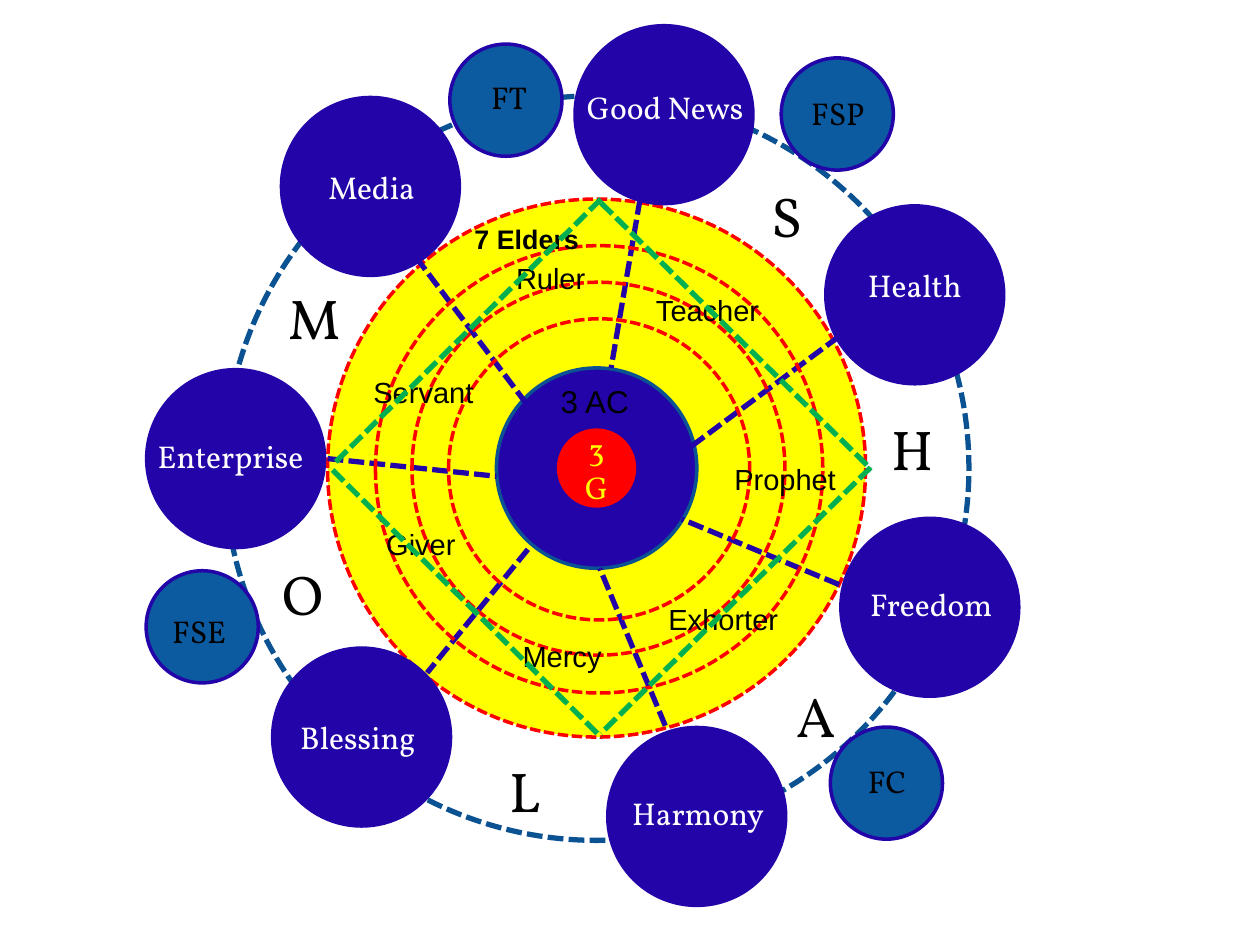
"""Build a wheel diagram of seven domains around a shared core."""
import pptx
import pptx.dml.color
import pptx.enum.dml
import pptx.enum.shapes
import pptx.enum.text
import pptx.oxml
import pptx.util

PX = 9144
SERIF, SANS = "Vollkorn", "Arial"
WHITE, BLACK, YELLOW, RED = "FFFFFF", "000000", "FFFF00", "FF0000"
INDIGO, NAVY, BLUE, GREEN = "2304A8", "0B5292", "0C5AA0", "00B050"

HUB, RING_CENTRE = (473, 371), (475, 372)
DISCS = [
    (591, WHITE, NAVY, 3, True),
    (427, YELLOW, RED, 2, True),
    (159, INDIGO, NAVY, 2, False),
]
CORE_SIZE, DOMAIN_SIZE, SATELLITE_SIZE = 63, 144, 89
RING_SIZES = [239, 296, 355]

# name, circle left and top, label left and top
DOMAINS = [
    ("Good News", (455, 19), (461, 70)),
    ("Health", (654, 162), (659, 211)),
    ("Freedom", (666, 410), (672, 464)),
    ("Harmony", (481, 576), (487, 630)),
    ("Blessing", (215, 513), (217, 570)),
    ("Enterprise", (115, 292), (116, 347)),
    ("Media", (222, 76), (228, 133)),
]
SATELLITES = [
    ("FSP", (620, 46), (641, 75)),
    ("FSE", (116, 453), (134, 486)),
    ("FC", (659, 577), (680, 605)),
    ("FT", (357, 35), (380, 62)),
]
SPOKES = [
    ((508, 158), (485, 292)),
    ((666, 267), (549, 354)),
    ((330, 204), (419, 322)),
    ((260, 364), (394, 378)),
    ((666, 464), (541, 412)),
    ((528, 576), (476, 451)),
    ((419, 436), (339, 534)),
]
LETTERS = [("S", 581, 144), ("H", 681, 329), ("A", 604, 541),
           ("L", 373, 600), ("O", 197, 444), ("M", 206, 225)]
GIFTS = [("Ruler", 393, 207, 88), ("Servant", 292, 297, 88), ("Giver", 290, 418, 88),
         ("Mercy", 402, 507, 88), ("Exhorter", 522, 477, 104),
         ("Prophet", 579, 366, 88), ("Teacher", 509, 232, 105)]
DIAMOND = [
    ((477, 158), (264, 369)),
    ((264, 373), (477, 585)),
    ((477, 161), (691, 372)),
    ((691, 371), (477, 582)),
]

deck = pptx.Presentation()
deck.slide_width, deck.slide_height = 1000 * PX, 750 * PX
slide = deck.slides.add_slide(deck.slide_layouts[6])


def rgb(colour):
    return pptx.dml.color.RGBColor.from_string(colour)


def style_line(line, colour, width, dashed):
    line.color.rgb = rgb(colour)
    line.width = pptx.util.Pt(width)
    if dashed:
        line.dash_style = pptx.enum.dml.MSO_LINE.SQUARE_DOT


def circle(corner, size, fill=None, outline=None, width=2, dashed=False):
    left, top = corner
    disc = slide.shapes.add_shape(pptx.enum.shapes.MSO_SHAPE.OVAL,
                                  left * PX, top * PX, size * PX, size * PX)
    disc.shadow.inherit = False
    if fill:
        disc.fill.solid()
        disc.fill.fore_color.rgb = rgb(fill)
    else:
        disc.fill.background()
    if outline:
        style_line(disc.line, outline, width, dashed)
    else:
        disc.line.fill.background()
    return disc


def centred(centre, size):
    return centre[0] - size // 2, centre[1] - size // 2


def dashed_line(start, end, colour):
    stroke = slide.shapes.add_connector(pptx.enum.shapes.MSO_CONNECTOR.STRAIGHT,
                                        *(v * PX for v in (*start, *end)))
    style_line(stroke.line, colour, 3, True)
    effects = pptx.oxml.parse_xml(
        '<a:effectLst xmlns:a="http://schemas.openxmlformats.org/drawingml/2006/main"/>')
    stroke.element.spPr.append(effects)


def write(frame, text, size, font, colour, bold=False):
    frame.word_wrap = True
    paragraph = frame.paragraphs[0]
    paragraph.alignment = pptx.enum.text.PP_ALIGN.CENTER
    run = paragraph.add_run()
    run.text = text
    run.font.size, run.font.name, run.font.bold = pptx.util.Pt(size), font, bold
    run.font.color.rgb = rgb(colour)


def label(text, corner, width, height, size, font, colour=BLACK, bold=False):
    left, top = corner
    frame = slide.shapes.add_textbox(left * PX, top * PX, width * PX, height * PX).text_frame
    frame.margin_left = frame.margin_right = frame.margin_top = frame.margin_bottom = 0
    write(frame, text, size, font, colour, bold)


for size, *look in DISCS:
    circle(centred(HUB, size), size, *look)
core = circle(centred(HUB, CORE_SIZE), CORE_SIZE, RED)
core.text_frame.vertical_anchor = pptx.enum.text.MSO_ANCHOR.MIDDLE
write(core.text_frame, "3 G", 18, SERIF, YELLOW)

for _, corner, _ in DOMAINS:
    circle(corner, DOMAIN_SIZE, INDIGO)
for start, end in SPOKES:
    dashed_line(start, end, INDIGO)
for size in RING_SIZES:
    circle(centred(RING_CENTRE, size), size, None, RED, 2, True)

for name, _, corner in DOMAINS:
    label(name, corner, 134, 41, 18, SERIF, WHITE)
label("3 AC", (405, 303), 134, 35, 18, SANS)
for name, disc_corner, label_corner in SATELLITES:
    circle(disc_corner, SATELLITE_SIZE, BLUE, INDIGO)
    label(name, label_corner, 48, 30, 18, SERIF)
for letter, left, top in LETTERS:
    label(letter, (left, top), 87, 51, 32, SERIF)
for gift, left, top, width in GIFTS:
    label(gift, (left, top), width, 27, 16.6, SANS)
label("7 Elders", (374, 177), 88, 27, 15.3, SANS, bold=True)
for start, end in DIAMOND:
    dashed_line(start, end, GREEN)

deck.save("out.pptx")
